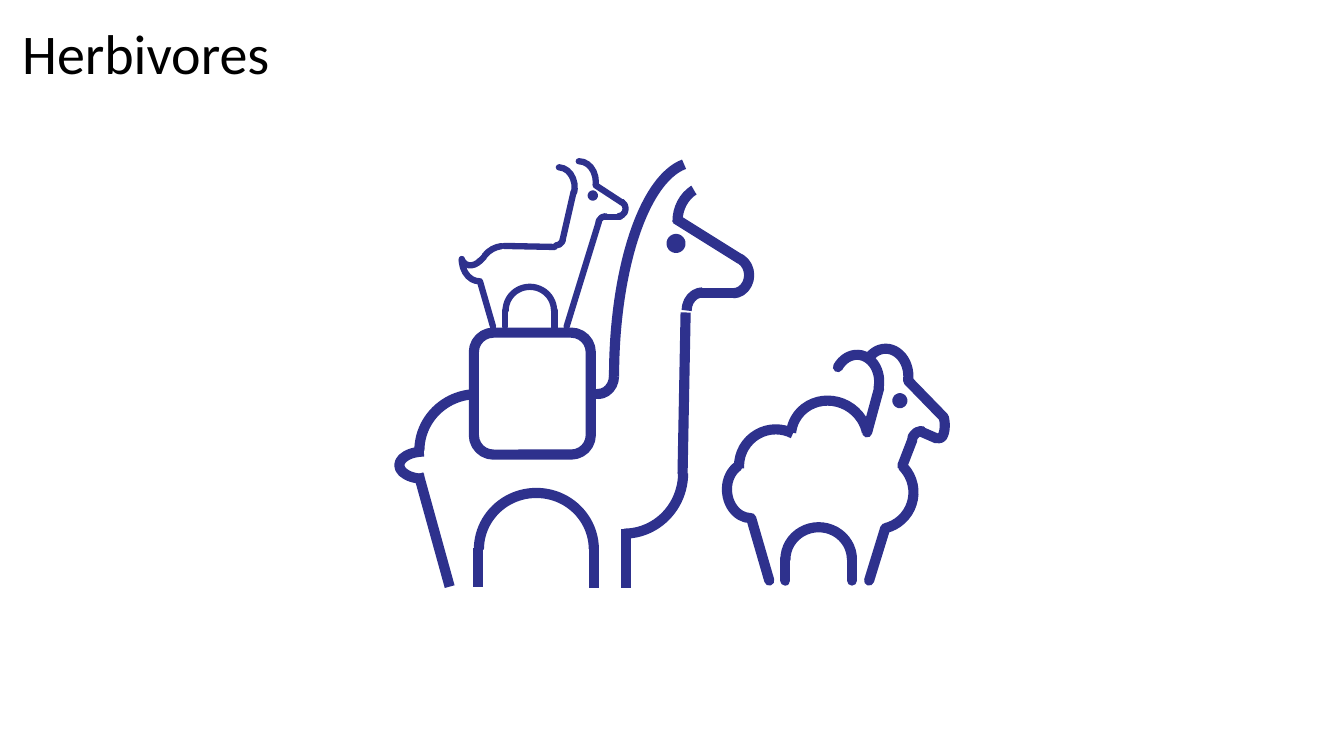
import pptx
import pptx.util
import pptx.oxml.ns
import pptx.dml.color
import pptx.enum.shapes
import pptx.enum.text
import lxml.etree

Inches, Pt = pptx.util.Inches, pptx.util.Pt
KIND = pptx.enum.shapes.MSO_SHAPE
COLORS = {"ink": "2E318D", "text": "000000"}

# Title
TITLE = "Herbivores"
FRAME = {"left": 0.12, "top": 0.13, "width": 6.34, "height": 0.77}
FONT = {"name": "Calibri", "size": Pt(40), "bold": False}
BODY = {"word_wrap": True, "vertical_anchor": pptx.enum.text.MSO_ANCHOR.TOP,
        "auto_size": pptx.enum.text.MSO_AUTO_SIZE.SHAPE_TO_FIT_TEXT}

# Line: x1, y1, x2, y2
# Arc: left, top, width, height, turn, start angle, end angle, mirrored
LLAMA = {
    "weight": 7.25, "cap": "flat",
    "lines": [
        (4.74, 5.44, 4.74, 5.82), (5.89, 5.44, 5.89, 5.83),
        (6.21, 5.83, 6.21, 5.25), (6.77, 4.7, 6.8, 3.1),
        (4.46, 5.82, 4.15, 4.7), (6.94, 2.91, 7.29, 2.91),
        (7.34, 2.57, 6.7, 2.17), (5.84, 3.91, 5.94, 3.91),
    ],
    "arcs": [
        (4.76, 4.88, 1.12, 1.14, 270, 270, 89.6, False),
        (5.59, 4.11, 1.2, 1.17, 90, 270, 0, False),
        (6.79, 2.92, 0.36, 0.32, 270, 270, 0, False),
        (4.17, 3.9, 1.12, 1.14, 270, 270, 354.5, False),
        (3.96, 4.48, 0.49, 0.27, 180, 270, 89.6, False),
        (5.75, 3.57, 0.36, 0.32, 90, 270, 0, False),
        (6.09, 1.61, 1.61, 4.25, 0, 273, 0, True),
        (7.09, 2.57, 0.36, 0.32, 90, 200, 0, False),
        (6.72, 1.84, 0.64, 0.71, 0, 297, 1.8, True),
    ],
    "eyes": [(6.66, 2.37, 0.09, 0.09)],
    "packs": [(4.7, 3.3, 1.16, 1.21)],
}
GOAT = {
    "weight": 4.5, "cap": "rnd",
    "lines": [
        (5.01, 3.08, 5.01, 3.24), (5.5, 3.08, 5.5, 3.25),
        (5.62, 3.24, 5.94, 2.2), (4.89, 3.24, 4.76, 2.79),
        (6, 2.15, 6.15, 2.15), (6.17, 2.01, 5.91, 1.84),
        (5, 2.44, 5.5, 2.45), (5.58, 2.38, 5.69, 1.9),
        (4.8, 2.55, 4.76, 2.59),
    ],
    "arcs": [
        (5.02, 2.84, 0.47, 0.48, 270, 270, 89.6, False),
        (5.93, 2.15, 0.15, 0.14, 270, 288.3, 0, False),
        (4.77, 2.43, 0.47, 0.49, 270, 305, 352, False),
        (5.44, 2.29, 0.15, 0.14, 90, 283.3, 0, False),
        (6.06, 2, 0.15, 0.14, 90, 207.7, 0, False),
        (5.58, 1.6, 0.33, 0.41, 0, 268.8, 10.8, False),
        (5.37, 1.66, 0.33, 0.41, 3.5, 268.8, 10.9, False),
        (4.58, 2.38, 0.33, 0.41, 174.6, 274, 10.8, False),
        (4.55, 2.39, 0.28, 0.22, 120.7, 288.4, 26.2, False),
    ],
    "eyes": [(5.86, 1.92, 0.04, 0.04)],
}
SHEEP = {
    "weight": 7.25, "cap": "rnd",
    "lines": [
        (7.79, 5.54, 7.79, 5.76), (8.45, 5.54, 8.45, 5.76),
        (8.62, 5.76, 8.78, 5.24), (7.63, 5.76, 7.45, 5.14),
        (9.13, 4.28, 9.29, 4.35), (9.36, 4.14, 9.01, 3.78),
        (8.6, 4.29, 8.72, 3.85), (8.95, 4.62, 9.05, 4.36),
    ],
    "arcs": [
        (7.8, 5.22, 0.64, 0.66, 270, 270, 89.6, False),
        (9.04, 4.28, 0.2, 0.19, 270, 288.3, 0, False),
        (9.19, 4.17, 0.26, 0.1, 90, 207.7, 0, False),
        (8.56, 3.46, 0.45, 0.55, 0, 230.9, 10.8, False),
        (8.27, 3.52, 0.45, 0.55, 3.5, 216.1, 10.9, False),
        (7.21, 4.59, 0.45, 0.55, 174.6, 274, 68.9, False),
    ],
    "eyes": [(8.9, 3.95, 0.05, 0.05)],
}
WOOL = {
    "weight": 7.25, "cap": "flat",
    "arcs": [
        (7.33, 4.26, 0.73, 0.73, 0, 176.2, 297.7, False),
        (7.84, 3.98, 0.77, 0.73, 28.9, 159, 322.2, False),
        (8.33, 4.52, 0.73, 0.73, 138.1, 176.2, 297.7, False),
    ],
}


def tint(name):
    return pptx.dml.color.RGBColor.from_string(COLORS[name])


def ink(shape, part):
    shape.line.color.rgb = tint("ink")
    shape.line.width = Pt(part["weight"])
    shape.line._get_or_add_ln().set("cap", part["cap"])


def place(pen, kind, box, part):
    shape = pen.add_shape(kind, *map(Inches, box))
    shape.shadow.inherit = False
    shape.fill.background()
    ink(shape, part)
    return shape


def draw(pen, part):
    for ends in part.get("lines", []):
        line = pen.add_connector(pptx.enum.shapes.MSO_CONNECTOR.STRAIGHT,
                                 *map(Inches, ends))
        ink(line, part)
        lxml.etree.SubElement(line._element.spPr, pptx.oxml.ns.qn("a:effectLst"))
    for *box, turn, start, end, flip in part.get("arcs", []):
        arc = place(pen, KIND.ARC, box, part)
        # Arc adjustments count 0.6 per degree
        arc.adjustments[0], arc.adjustments[1] = start * 0.6, end * 0.6
        arc.rotation = turn
        if flip:
            arc._element.spPr.xfrm.set("flipH", "1")
    for box in part.get("packs", []):
        place(pen, KIND.ROUNDED_RECTANGLE, box, part)
    for box in part.get("eyes", []):
        eye = place(pen, KIND.OVAL, box, part)
        eye.fill.solid()
        eye.fill.fore_color.rgb = tint("ink")


def main():
    deck = pptx.Presentation()
    deck.slide_width, deck.slide_height = Inches(13.33), Inches(7.5)
    slide = deck.slides.add_slide(deck.slide_layouts[5])

    # Heading
    title = slide.shapes.title
    title.text = TITLE
    for key, size in FRAME.items():
        setattr(title, key, Inches(size))
    for key, val in BODY.items():
        setattr(title.text_frame, key, val)
    para = title.text_frame.paragraphs[0]
    para.alignment = pptx.enum.text.PP_ALIGN.LEFT
    font = para.runs[0].font
    for key, val in FONT.items():
        setattr(font, key, val)
    font.color.rgb = tint("text")

    # Animals
    draw(slide.shapes, LLAMA)
    draw(slide.shapes, GOAT)
    flock = slide.shapes.add_group_shape()
    for part in (SHEEP, WOOL):
        draw(flock.shapes, part)
    deck.save("out.pptx")


if __name__ == "__main__":
    main()
